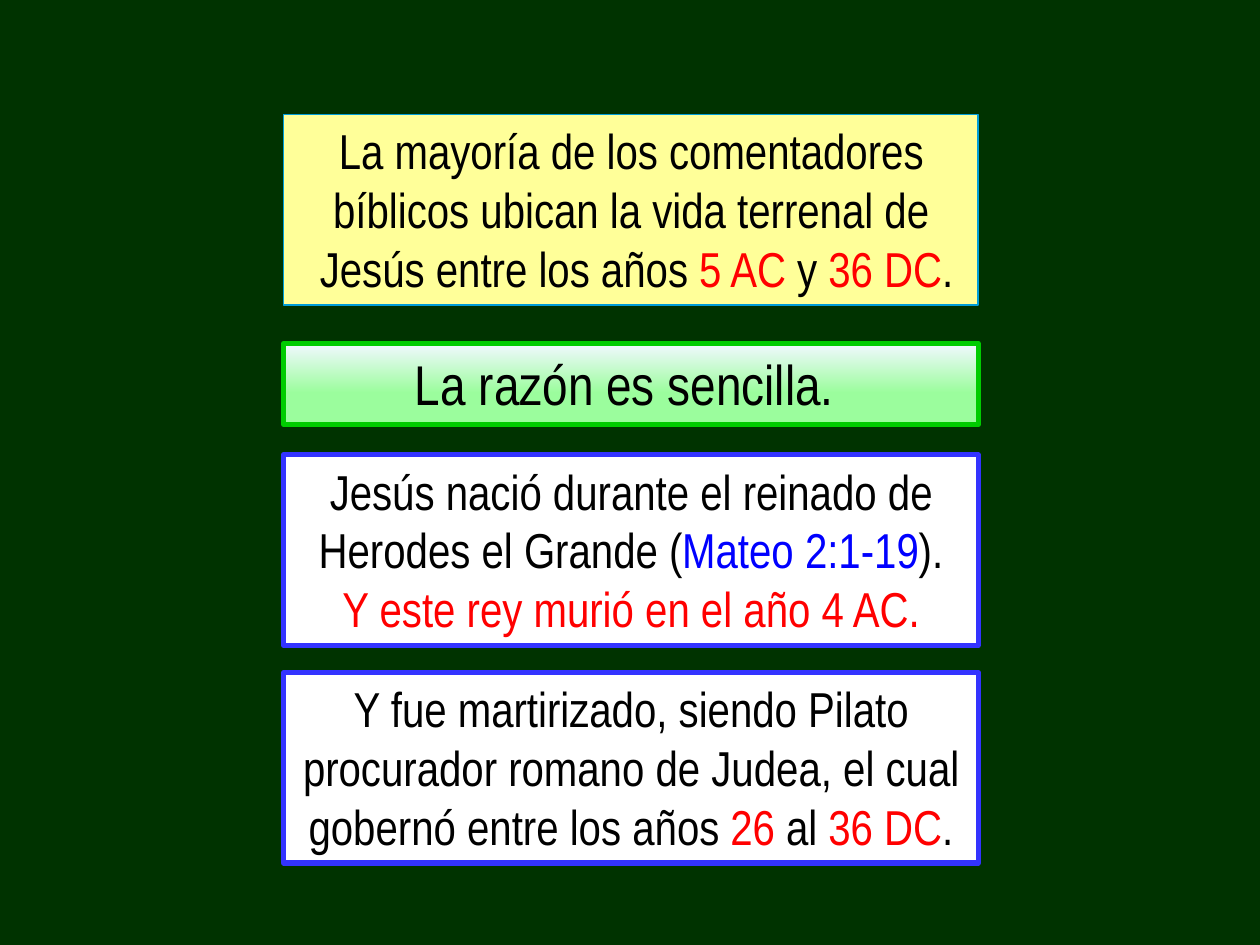
from dataclasses import dataclass

from lxml import etree
from pptx import Presentation
from pptx.dml.color import RGBColor
from pptx.enum.shapes import MSO_SHAPE
from pptx.enum.text import MSO_ANCHOR, MSO_AUTO_SIZE, PP_ALIGN
from pptx.oxml.ns import qn
from pptx.util import Cm, Pt

RECTANGLE = MSO_SHAPE.RECTANGLE
TOP = MSO_ANCHOR.TOP
GROW = MSO_AUTO_SIZE.SHAPE_TO_FIT_TEXT
CENTER = PP_ALIGN.CENTER

COLORS = {
    "background": "003300",
    "yellow": "FFFF99",
    "cyan": "009DD9",
    "pale": "F1F8FE",
    "mint": "9BFD9D",
    "green": "00CC00",
    "white": "FFFFFF",
    "indigo": "3333FF",
    "black": "000000",
    "red": "FF0000",
    "blue": "0000FF",
}
FONT = "Arial Narrow"
LEFT, WIDTH = 5.72, 14
OUTLINE = Pt(1.5)

Run = tuple[str, str]


@dataclass
class Panel:
    top: float
    height: float
    fills: list[str]
    border: str
    border_pt: float
    size: int
    paragraphs: list[list[Run]]


PANELS = [
    Panel(2.31, 3.84, ["yellow"], "cyan", 0.75, 28, [
        [("La mayoría de los comentadores bíblicos ubican la vida terrenal de", "black")],
        [(" Jesús entre los años ", "black"), ("5 AC ", "red"), ("y ", "black"),
         ("36 DC", "red"), (".", "black")],
    ]),
    Panel(6.93, 1.63, ["pale", "mint"], "green", 3, 32, [
        [("La razón es sencilla. ", "black")],
    ]),
    Panel(9.17, 3.84, ["white"], "indigo", 3, 28, [
        [("Jesús nació durante el reinado de Herodes el Grande (", "black"),
         ("Mateo 2:1-19", "blue"), (").", "black")],
        [("Y este rey murió en el año 4 AC.", "red")],
    ]),
    Panel(13.56, 3.84, ["white"], "indigo", 3, 28, [
        [("Y fue martirizado, siendo Pilato procurador romano de Judea, "
          "el cual gobernó entre los años ", "black"),
         ("26 ", "red"), ("al ", "black"), ("36 DC", "red"), (".", "black")],
    ]),
]


def rgb(name: str) -> RGBColor:
    return RGBColor.from_string(COLORS[name])


def set_fill(fill, names: list[str]) -> None:
    if len(names) == 1:
        fill.solid()
        fill.fore_color.rgb = rgb(names[0])
        return
    fill.gradient()
    fill.gradient_angle = 270
    for stop, name, position in zip(fill.gradient_stops, names, (0, 0.61)):
        stop.color.rgb = rgb(name)
        stop.position = position


def add_run(p, text: str, color: str, size: int) -> None:
    r = p.add_run()
    r.text = text
    r.font.name = FONT
    r.font.size = Pt(size)
    r.font.color.rgb = rgb(color)
    ln = etree.Element(qn("a:ln"), w=str(OUTLINE))
    solid = etree.SubElement(ln, qn("a:solidFill"))
    etree.SubElement(solid, qn("a:srgbClr"), val=COLORS[color])
    r.font._element.insert(0, ln)


def add_panel(slide, panel: Panel) -> None:
    sp = slide.shapes.add_shape(
        RECTANGLE, Cm(LEFT), Cm(panel.top), Cm(WIDTH), Cm(panel.height))
    sp.shadow.inherit = False
    set_fill(sp.fill, panel.fills)
    sp.line.color.rgb = rgb(panel.border)
    sp.line.width = Pt(panel.border_pt)
    tf = sp.text_frame
    tf.word_wrap = True
    tf.auto_size = GROW
    tf.vertical_anchor = TOP
    for i, runs in enumerate(panel.paragraphs):
        p = tf.add_paragraph() if i else tf.paragraphs[0]
        p.alignment = CENTER
        for text, color in runs:
            add_run(p, text, color, panel.size)


def main() -> None:
    prs = Presentation()
    prs.slide_width, prs.slide_height = Cm(25.4), Cm(19.05)
    s = prs.slides.add_slide(prs.slide_layouts[6])
    set_fill(s.background.fill, ["background"])
    for panel in PANELS:
        add_panel(s, panel)
    prs.save("out.pptx")


if __name__ == "__main__":
    main()
